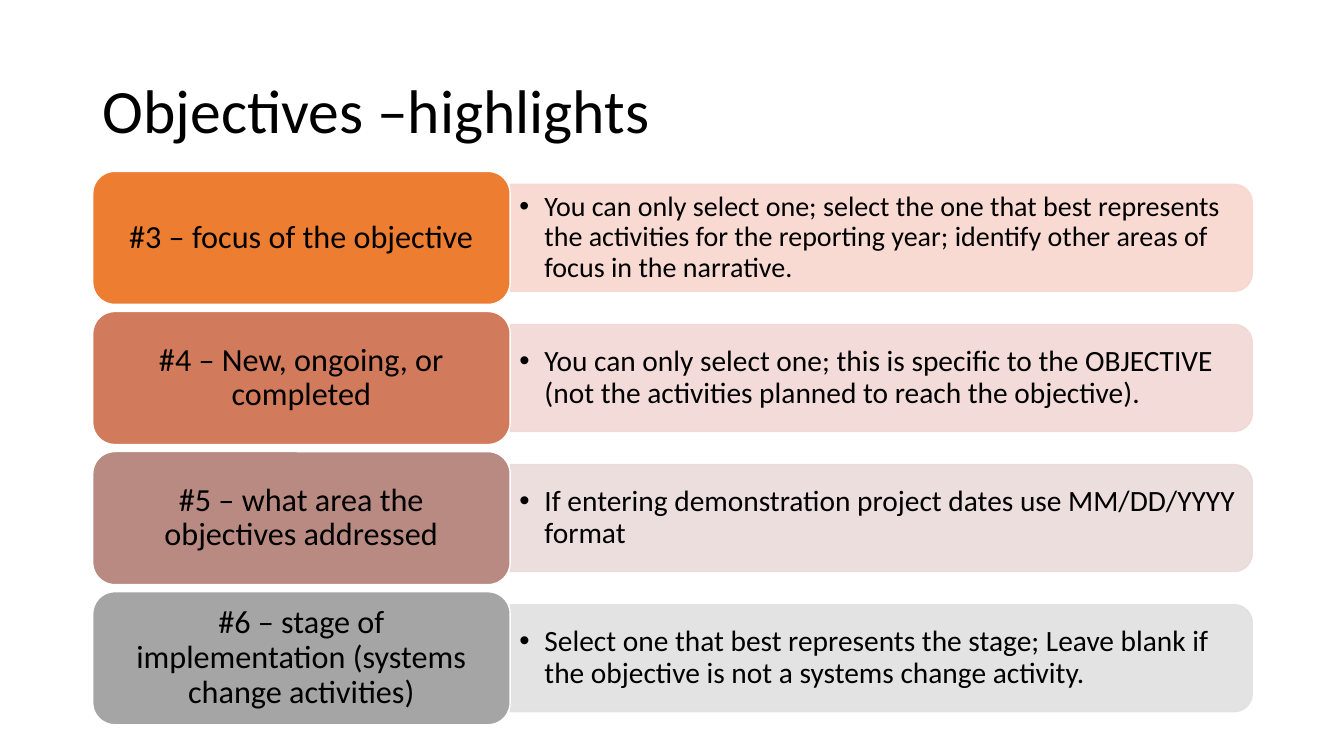
from lxml import etree
from pptx import Presentation
from pptx.dml.color import RGBColor
from pptx.enum.shapes import MSO_SHAPE
from pptx.enum.text import MSO_ANCHOR, PP_ALIGN
from pptx.oxml.ns import qn
from pptx.util import Inches, Pt

ROUNDED = MSO_SHAPE.ROUNDED_RECTANGLE
ROUNDED_END = MSO_SHAPE.ROUND_2_SAME_RECTANGLE
MIDDLE = MSO_ANCHOR.MIDDLE
LEFT, CENTER = PP_ALIGN.LEFT, PP_ALIGN.CENTER

COLORS = {
    "text": "000000", "outline": "FFFFFF",
    "label3": "ED7D31", "detail3": "F8D7CE",
    "label4": "D17B5C", "detail4": "F1D8D4",
    "label5": "B98A82", "detail5": "E9DBDA",
    "label6": "A5A5A5", "detail6": "E1E1E1",
}
ROWS = [
    ("3", "#3 – focus of the objective",
     "You can only select one; select the one that best represents the activities "
     "for the reporting year; identify other areas of focus in the narrative.", 20),
    ("4", "#4 – New, ongoing, or completed",
     "You can only select one; this is specific to the OBJECTIVE "
     "(not the activities planned to reach the objective).", 21),
    ("5", "#5 – what area the objectives addressed",
     "If entering demonstration project dates use MM/DD/YYYY format", 21),
    ("6", "#6 – stage of implementation (systems change activities)",
     "Select one that best represents the stage; Leave blank if "
     "the objective is not a systems change activity.", 21),
]
ROW_LEFT, ROW_TOP, ROW_WIDTH, ROW_HEIGHT, ROW_PITCH = 0.92, 1.7, 11.5, 1.32, 1.39
LABEL_WIDTH, BAR_HEIGHT, DETAIL_HEIGHT = 4.14, 1.06, 0.96


def color(name):
    return RGBColor.from_string(COLORS[name])


def write_text(shape, text, size, align, margins):
    frame = shape.text_frame
    side, edge = Inches(margins[0]), Inches(margins[1])
    frame_format = {"word_wrap": True, "vertical_anchor": MIDDLE, "margin_left": side,
                    "margin_right": side, "margin_top": edge, "margin_bottom": edge}
    for name, value in frame_format.items():
        setattr(frame, name, value)
    paragraph = frame.paragraphs[0]
    paragraph.text = text
    paragraph.alignment = align
    paragraph.line_spacing = 0.9
    for name, value in {"name": "Calibri", "size": Pt(size)}.items():
        setattr(paragraph.font, name, value)
    paragraph.font.color.rgb = color("text")
    return paragraph


def add_text(slide, box, text, size, margins):
    shape = slide.shapes.add_textbox(*map(Inches, box))
    return write_text(shape, text, size, LEFT, margins)


def add_block(slide, kind, box, fill, outline):
    shape = slide.shapes.add_shape(kind, *map(Inches, box))
    shape.shadow.inherit = False
    shape.fill.solid()
    shape.fill.fore_color.rgb = color(fill)
    shape.line.color.rgb = color(outline)
    shape.line.width = Pt(1)
    return shape


def add_label(slide, box, fill, text):
    shape = add_block(slide, ROUNDED, box, fill, "outline")
    write_text(shape, text, 23, CENTER, (0.16, 0.11))


def add_detail(slide, box, fill, text, size):
    left, top, width, height = box
    middle = top + height / 2
    upright = (left + (width - BAR_HEIGHT) / 2, middle - width / 2, BAR_HEIGHT, width)
    bar = add_block(slide, ROUNDED_END, upright, fill, fill)
    bar.rotation = 90
    for solid in bar._element.spPr.iter(qn("a:solidFill")):
        etree.SubElement(solid[0], qn("a:alpha"), val="90000")
    text_box = (left, middle - DETAIL_HEIGHT / 2, width - 0.05, DETAIL_HEIGHT)
    paragraph = add_text(slide, text_box, text, size, (0.09, 0.04))
    properties = paragraph._p.get_or_add_pPr()
    properties.set("marL", str(Inches(0.25)))
    properties.set("indent", str(Inches(-0.25)))
    etree.SubElement(properties, qn("a:buFont"), typeface="Arial")
    etree.SubElement(properties, qn("a:buChar"), char="•")
    properties.append(properties.find(qn("a:defRPr")))


def add_row(slide, box, key, label, detail, size):
    left, top, width, height = box
    detail_box = (left + LABEL_WIDTH, top, width - LABEL_WIDTH, height)
    add_detail(slide, detail_box, "detail" + key, detail, size)
    add_label(slide, (left, top, LABEL_WIDTH, height), "label" + key, label)


def main():
    presentation = Presentation()
    presentation.slide_width = Inches(13.33)
    presentation.slide_height = Inches(7.5)
    slide = presentation.slides.add_slide(presentation.slide_layouts[6])
    add_text(slide, (0.92, 0.4, 11.5, 1.45), "Objectives –highlights", 44, (0.1, 0.05))
    for index, row in enumerate(ROWS):
        box = (ROW_LEFT, ROW_TOP + index * ROW_PITCH, ROW_WIDTH, ROW_HEIGHT)
        add_row(slide, box, *row)
    presentation.save("out.pptx")


if __name__ == "__main__":
    main()
